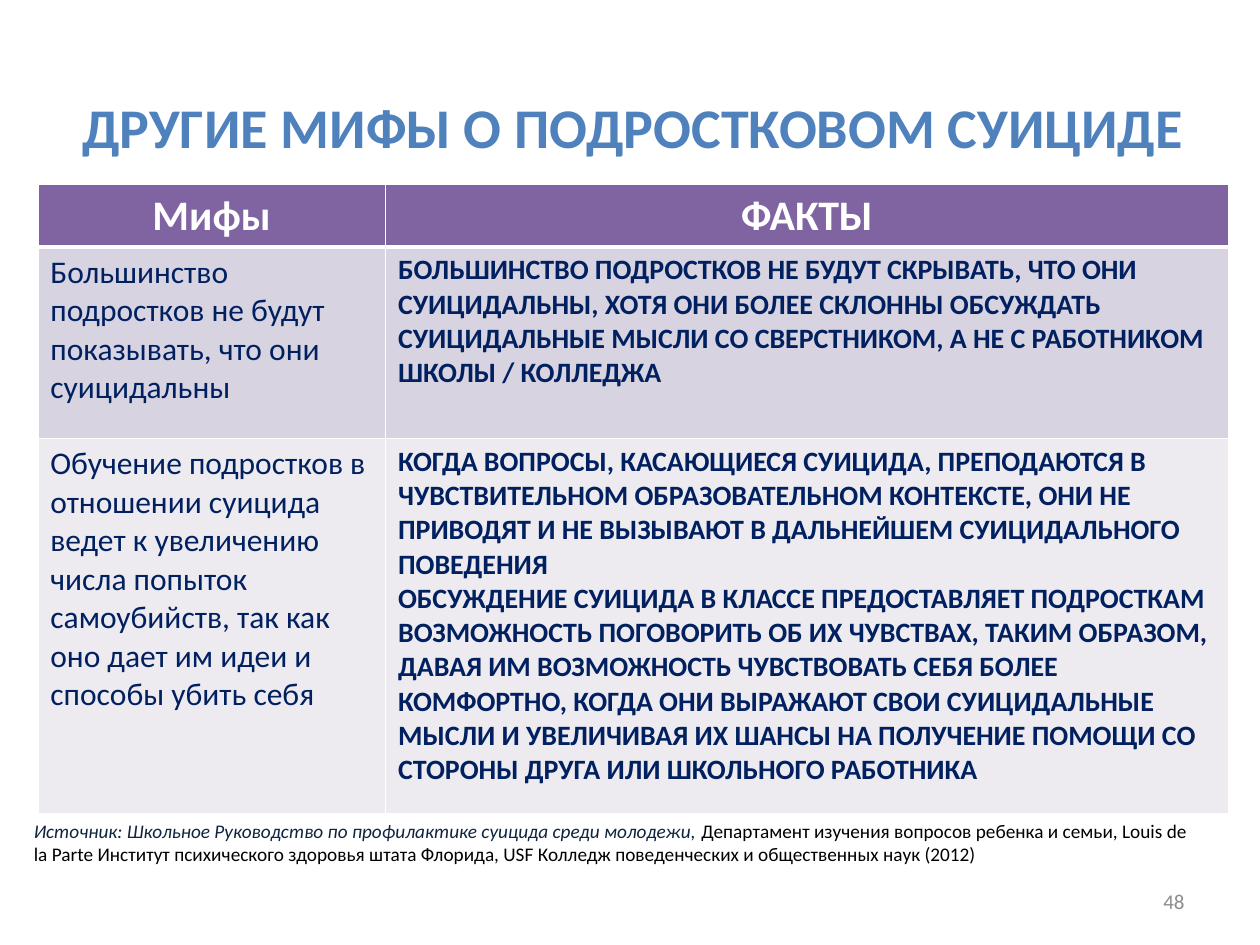
from dataclasses import dataclass

from lxml import etree
from pptx import Presentation
from pptx.dml.color import RGBColor
from pptx.enum.text import MSO_ANCHOR, PP_ALIGN
from pptx.oxml.ns import qn
from pptx.util import Inches, Pt

LEFT, CENTER, RIGHT = PP_ALIGN.LEFT, PP_ALIGN.CENTER, PP_ALIGN.RIGHT
MIDDLE = MSO_ANCHOR.MIDDLE

FONT = "Calibri"
WHITE, NAVY, BLUE = "FFFFFF", "002060", "4F81BD"
PURPLE, BAND_DARK, BAND_LIGHT = "8064A2", "D8D3E0", "EDEAF0"


@dataclass
class Style:
    size: float
    color: str
    bold: bool = False
    italic: bool = False


@dataclass
class TableRow:
    height: float
    fill: str
    myth: str
    fact: str
    myth_style: Style
    fact_style: Style
    align: PP_ALIGN = LEFT
    bottom_line: float = 1


HEADER = Style(24, WHITE, bold=True)
MYTH = Style(18, NAVY)
FACT = Style(16, NAVY, bold=True)

COLUMN_WIDTHS = (2.76, 6.69)
ROWS = [
    TableRow(0.49, PURPLE, "Мифы", "ФАКТЫ", HEADER, HEADER, CENTER, 3),
    TableRow(
        1.52, BAND_DARK,
        "Большинство подростков не будут показывать, что они суицидальны",
        "БОЛЬШИНСТВО ПОДРОСТКОВ НЕ БУДУТ СКРЫВАТЬ, ЧТО ОНИ СУИЦИДАЛЬНЫ, "
        "ХОТЯ ОНИ БОЛЕЕ СКЛОННЫ ОБСУЖДАТЬ СУИЦИДАЛЬНЫЕ МЫСЛИ СО "
        "СВЕРСТНИКОМ, А НЕ С РАБОТНИКОМ ШКОЛЫ / КОЛЛЕДЖА",
        MYTH, FACT,
    ),
    TableRow(
        2.98, BAND_LIGHT,
        "Обучение подростков в отношении суицида ведет к увеличению числа "
        "попыток самоубийств, так как оно дает им идеи и способы убить себя",
        "КОГДА ВОПРОСЫ, КАСАЮЩИЕСЯ СУИЦИДА, ПРЕПОДАЮТСЯ В ЧУВСТВИТЕЛЬНОМ "
        "ОБРАЗОВАТЕЛЬНОМ КОНТЕКСТЕ, ОНИ НЕ ПРИВОДЯТ И НЕ ВЫЗЫВАЮТ В "
        "ДАЛЬНЕЙШЕМ СУИЦИДАЛЬНОГО ПОВЕДЕНИЯ\n"
        "ОБСУЖДЕНИЕ СУИЦИДА В КЛАССЕ ПРЕДОСТАВЛЯЕТ ПОДРОСТКАМ ВОЗМОЖНОСТЬ "
        "ПОГОВОРИТЬ ОБ ИХ ЧУВСТВАХ, ТАКИМ ОБРАЗОМ, ДАВАЯ ИМ ВОЗМОЖНОСТЬ "
        "ЧУВСТВОВАТЬ СЕБЯ БОЛЕЕ КОМФОРТНО, КОГДА ОНИ ВЫРАЖАЮТ СВОИ "
        "СУИЦИДАЛЬНЫЕ МЫСЛИ И УВЕЛИЧИВАЯ ИХ ШАНСЫ НА ПОЛУЧЕНИЕ ПОМОЩИ СО "
        "СТОРОНЫ ДРУГА ИЛИ ШКОЛЬНОГО РАБОТНИКА",
        MYTH, FACT,
    ),
]


def rgb(color: str) -> RGBColor:
    return RGBColor.from_string(color)


def format_font(font, style: Style) -> None:
    font.name = FONT
    font.size = Pt(style.size)
    font.bold = style.bold
    font.italic = style.italic
    font.color.rgb = rgb(style.color)


def write_text(frame, text: str, style: Style, align: PP_ALIGN = LEFT) -> None:
    frame.text = text
    frame.word_wrap = True
    for para in frame.paragraphs:
        para.alignment = align
        for span in para.runs:
            format_font(span.font, style)


def add_box(page, left: float, top: float, width: float, height: float):
    return page.shapes.add_textbox(
        Inches(left), Inches(top), Inches(width), Inches(height))


def add_borders(cell, top: float, bottom: float) -> None:
    """Draw white lines round a cell, with widths in points."""
    properties = cell._tc.get_or_add_tcPr()
    for side, width in (("L", 1), ("R", 1), ("T", top), ("B", bottom)):
        line = etree.SubElement(properties, qn(f"a:ln{side}"), w=str(Pt(width)))
        fill = etree.SubElement(line, qn("a:solidFill"))
        etree.SubElement(fill, qn("a:srgbClr"), val=WHITE)


def add_myth_table(page) -> None:
    table = page.shapes.add_table(
        len(ROWS), len(COLUMN_WIDTHS), Inches(0.3), Inches(1.46),
        Inches(sum(COLUMN_WIDTHS)), Inches(sum(row.height for row in ROWS)),
    ).table
    for column, width in zip(table.columns, COLUMN_WIDTHS):
        column.width = Inches(width)
    top_line = 1
    for table_row, row in zip(table.rows, ROWS):
        table_row.height = Inches(row.height)
        contents = ((row.myth, row.myth_style), (row.fact, row.fact_style))
        for cell, (text, style) in zip(table_row.cells, contents):
            add_borders(cell, top_line, row.bottom_line)
            cell.fill.solid()
            cell.fill.fore_color.rgb = rgb(row.fill)
            write_text(cell.text_frame, text, style, row.align)
        top_line = row.bottom_line


def main() -> None:
    deck = Presentation()
    deck.slide_width, deck.slide_height = Inches(10), Inches(7.5)
    page = deck.slides.add_slide(deck.slide_layouts[5])

    # Title
    title = page.shapes.title
    title.left, title.top = Inches(0.2), Inches(0.68)
    title.width, title.height = Inches(9.65), Inches(0.64)
    write_text(title.text_frame, "ДРУГИЕ МИФЫ О ПОДРОСТКОВОМ СУИЦИДЕ",
               Style(32, BLUE, bold=True), CENTER)
    title.text_frame.vertical_anchor = MIDDLE

    # Page number
    number = add_box(page, 7.17, 6.95, 2.33, 0.4)
    write_text(number.text_frame, "48", Style(12, "8C8C8C"), RIGHT)
    number.text_frame.vertical_anchor = MIDDLE

    # Myths and facts
    add_myth_table(page)

    # Source
    source = add_box(page, 0.17, 6.45, 9.45, 0.47).text_frame
    write_text(
        source,
        "Источник: Школьное Руководство по профилактике суицида среди молодежи, ",
        Style(11, "0F243E", italic=True))
    span = source.paragraphs[0].add_run()
    span.text = (
        "Департамент изучения вопросов ребенка и семьи, Louis de la Parte "
        "Институт психического здоровья штата Флорида, USF Колледж "
        "поведенческих и общественных наук (2012)")
    format_font(span.font, Style(11, "000000"))

    deck.save("out.pptx")


if __name__ == "__main__":
    main()
